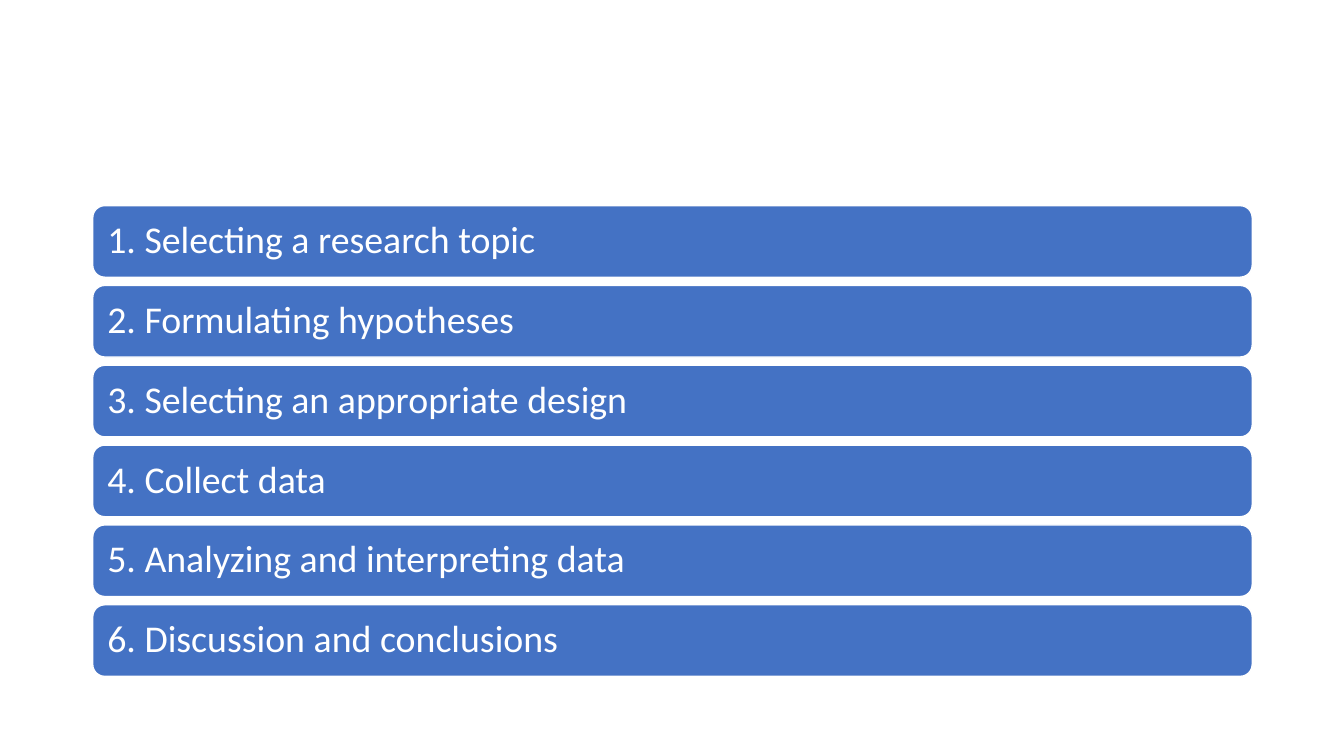
"""Build a slide that lists six research steps as stacked bars."""
import pptx
import pptx.util
import pptx.dml.color
import pptx.enum.shapes
import pptx.enum.text

Inches = pptx.util.Inches
Pt = pptx.util.Pt

BLUE = pptx.dml.color.RGBColor(0x44, 0x72, 0xC4)
WHITE = pptx.dml.color.RGBColor(0xFF, 0xFF, 0xFF)

STEPS = [
    "Selecting a research topic",
    "Formulating hypotheses",
    "Selecting an appropriate design",
    "Collect data",
    "Analyzing and interpreting data",
    "Discussion and conclusions",
]
FIRST = 2.04
LAST = 6
PITCH = (LAST - FIRST) / (len(STEPS) - 1)


def style_text(frame):
    frame.word_wrap = True
    frame.vertical_anchor = pptx.enum.text.MSO_ANCHOR.MIDDLE
    frame.margin_left = frame.margin_right = Inches(0.11)
    frame.margin_top = frame.margin_bottom = Inches(0.11)
    para = frame.paragraphs[0]
    para.alignment = pptx.enum.text.PP_ALIGN.LEFT
    para.line_spacing = 0.9
    font = para.runs[0].font
    font.name = "Calibri"
    font.size = Pt(27)
    font.color.rgb = WHITE


def add_bar(slide, top, text):
    bar = slide.shapes.add_shape(
        pptx.enum.shapes.MSO_SHAPE.ROUNDED_RECTANGLE,
        Inches(0.92), Inches(top), Inches(11.5), Inches(0.71))
    bar.shadow.inherit = False
    bar.fill.solid()
    bar.fill.fore_color.rgb = BLUE
    bar.line.color.rgb = WHITE
    bar.line.width = Pt(1)
    bar.text_frame.text = text
    style_text(bar.text_frame)


def main():
    deck = pptx.Presentation()
    deck.slide_width = Inches(13.33)
    deck.slide_height = Inches(7.5)
    slide = deck.slides.add_slide(deck.slide_layouts.get_by_name("Blank"))
    for index, step in enumerate(STEPS):
        add_bar(slide, FIRST + index * PITCH, f"{index + 1}. {step}")
    deck.save("out.pptx")


if __name__ == "__main__":
    main()
